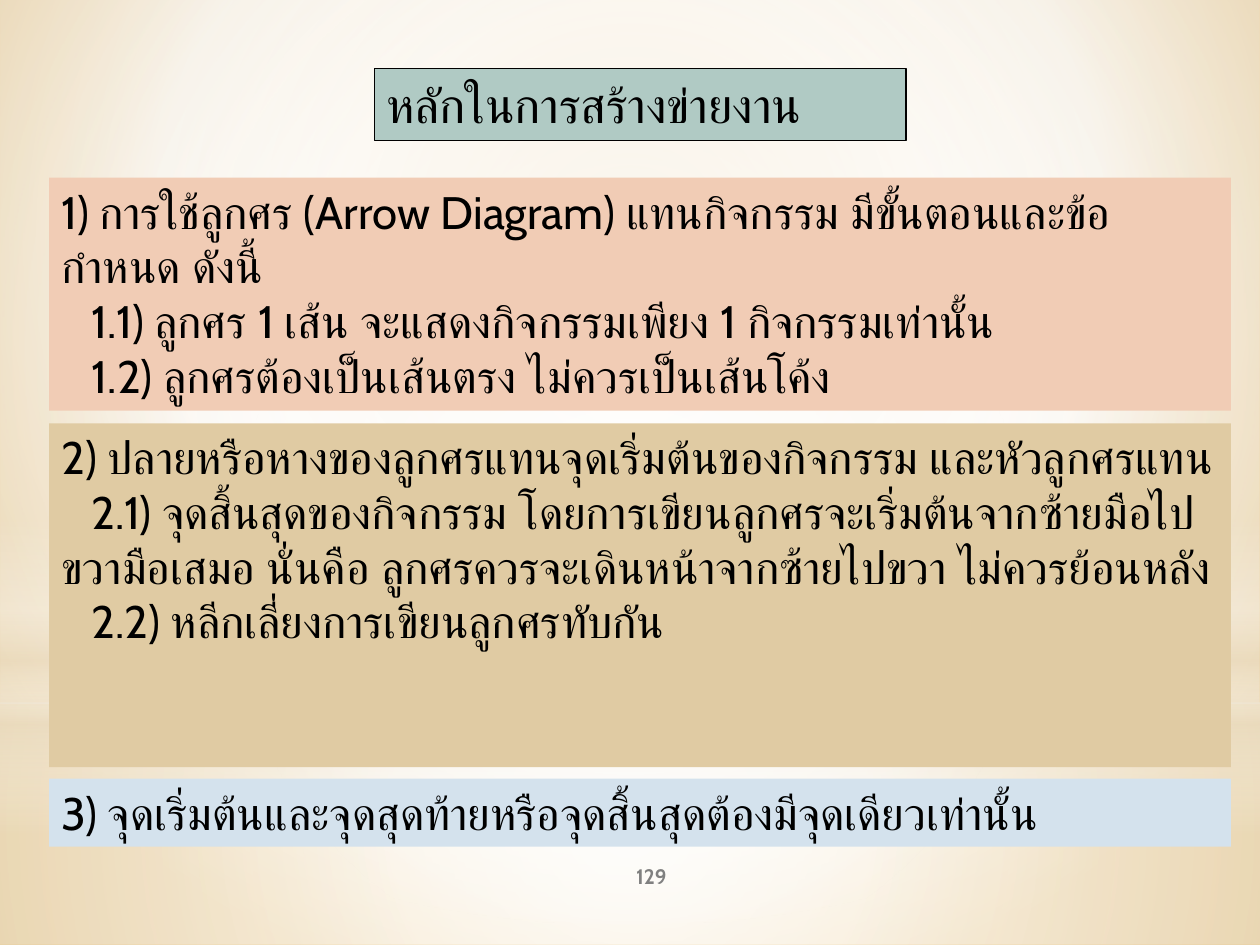
from dataclasses import dataclass

from lxml import etree
from pptx import Presentation
from pptx.dml.color import RGBColor
from pptx.enum.shapes import MSO_SHAPE
from pptx.enum.text import MSO_ANCHOR, PP_ALIGN
from pptx.oxml import parse_xml
from pptx.oxml.ns import nsdecls, qn
from pptx.shapes.autoshape import Shape
from pptx.slide import Slide
from pptx.util import Pt

RECT, OVAL = MSO_SHAPE.RECTANGLE, MSO_SHAPE.OVAL
TOP, MIDDLE = MSO_ANCHOR.TOP, MSO_ANCHOR.MIDDLE
LEFT, CENTER = PP_ALIGN.LEFT, PP_ALIGN.CENTER

FONT = "Cabin"
WIDTH, HEIGHT = 720, 540
PANEL_LEFT, PANEL_WIDTH = 28.08, 675.36
SUB_INDENT = 17.2
COLORS = {
    "white": "FFFFFF", "black": "000000", "gray": "808080",
    "sand": "ECD7B0", "gold": "E6BE74", "cream": "EBDDC3",
    "teal": "B0CAC4", "peach": "F1CCB5", "tan": "E0CBA3", "blue": "D4E2ED",
}


@dataclass(frozen=True)
class Gradient:
    stops: tuple[tuple[int, str, int], ...]
    center: tuple[int, int, int, int] | None = (50, 50, 50, 50)


@dataclass(frozen=True)
class Glow:
    shape: MSO_SHAPE
    top: float
    height: float
    gradient: Gradient


@dataclass(frozen=True)
class Panel:
    top: float
    height: float
    color: str
    heading: str
    items: tuple[str, ...] = ()
    left: float = PANEL_LEFT
    width: float = PANEL_WIDTH
    size: float = 26
    outlined: bool = False


BACKDROP = Gradient(((0, "sand", 100), (60, "white", 100), (100, "gold", 100)),
                    (20, 10, 20, 60))
GLOWS = [
    Glow(RECT, 401.76, 138.24,
         Gradient(((0, "white", 91), (37, "white", 76), (100, "cream", 79)))),
    Glow(RECT, 0, 401.76,
         Gradient(((0, "white", 89), (48, "white", 62), (100, "cream", 79)))),
    Glow(RECT, 296.64, 180,
         Gradient(((0, "white", 0), (29, "white", 30), (45, "cream", 40),
                   (55, "white", 26), (65, "cream", 60), (100, "white", 0)), None)),
    Glow(OVAL, 126, 401.76, Gradient(((0, "white", 100), (56, "white", 0)))),
]
PANELS = [
    Panel(39.24, 41.04, "teal", "หลักในการสร้างข่ายงาน",
          left=213.84, width=303.84, size=28, outlined=True),
    Panel(101.52, 133.2, "peach",
          "1) การใช้ลูกศร (Arrow Diagram) แทนกิจกรรม มีขั้นตอนและข้อกำหนด ดังนี้",
          ("1.1) ลูกศร 1 เส้น จะแสดงกิจกรรมเพียง 1 กิจกรรมเท่านั้น",
           "1.2) ลูกศรต้องเป็นเส้นตรง ไม่ควรเป็นเส้นโค้ง")),
    Panel(241.92, 196.56, "tan",
          "2) ปลายหรือหางของลูกศรแทนจุดเริ่มต้นของกิจกรรม และหัวลูกศรแทน",
          ("2.1) จุดสิ้นสุดของกิจกรรม โดยการเขียนลูกศรจะเริ่มต้นจากซ้ายมือไปขวามือเสมอ "
           "นั่นคือ ลูกศรควรจะเดินหน้าจากซ้ายไปขวา ไม่ควรย้อนหลัง",
           "2.2) หลีกเลี่ยงการเขียนลูกศรทับกัน")),
    Panel(444.96, 38.88, "blue",
          "3) จุดเริ่มต้นและจุดสุดท้ายหรือจุดสิ้นสุดต้องมีจุดเดียวเท่านั้น"),
]


def rgb(name: str) -> RGBColor:
    """Return the named palette colour."""
    return RGBColor.from_string(COLORS[name])


def set_gradient(parent: etree._Element, gradient: Gradient) -> None:
    """Replace the solid fill of an element with a gradient."""
    stops = "".join(
        f'<a:gs pos="{pos * 1000}"><a:srgbClr val="{COLORS[color]}">'
        f'<a:alpha val="{alpha * 1000}"/></a:srgbClr></a:gs>'
        for pos, color, alpha in gradient.stops)
    if gradient.center:
        l, t, r, b = (side * 1000 for side in gradient.center)
        shade = (f'<a:path path="circle"><a:fillToRect l="{l}" t="{t}" '
                 f'r="{r}" b="{b}"/></a:path>')
    else:
        shade = '<a:lin ang="5400000" scaled="0"/>'
    fill = parse_xml(f'<a:gradFill {nsdecls("a")} rotWithShape="1">'
                     f'<a:gsLst>{stops}</a:gsLst>{shade}</a:gradFill>')
    parent.replace(parent.find(qn("a:solidFill")), fill)


def add_block(slide: Slide, shape: MSO_SHAPE, left: float, top: float,
              width: float, height: float, color: str) -> Shape:
    """Add a flat shape without outline."""
    sp = slide.shapes.add_shape(shape, Pt(left), Pt(top), Pt(width), Pt(height))
    sp.shadow.inherit = False
    sp.fill.solid()
    sp.fill.fore_color.rgb = rgb(color)
    sp.line.fill.background()
    return sp


def add_glow(slide: Slide, glow: Glow) -> None:
    """Add a full-width translucent gradient."""
    sp = add_block(slide, glow.shape, 0, glow.top, WIDTH, glow.height, "white")
    set_gradient(sp.element.spPr, glow.gradient)


def write(sp: Shape, lines: tuple[str, ...], size: float, color: str = "black",
          align: PP_ALIGN = LEFT, anchor: MSO_ANCHOR = TOP, bold: bool = False) -> None:
    """Write paragraphs, indenting the first line of all but the first."""
    tf = sp.text_frame
    tf.word_wrap = True
    tf.vertical_anchor = anchor
    for i, line in enumerate(lines):
        p = tf.add_paragraph() if i else tf.paragraphs[0]
        p.text = line
        p.alignment = align
        if i:
            p._p.get_or_add_pPr().set("indent", str(Pt(SUB_INDENT)))
        p.font.name = FONT
        p.font.size = Pt(size)
        p.font.bold = bold
        p.font.color.rgb = rgb(color)


def add_panel(slide: Slide, panel: Panel) -> None:
    """Add a coloured panel with its heading and items."""
    sp = add_block(slide, RECT, panel.left, panel.top, panel.width, panel.height,
                   panel.color)
    if panel.outlined:
        sp.line.color.rgb = rgb("black")
        sp.line.width = Pt(0.75)
    write(sp, (panel.heading, *panel.items), panel.size)


def main() -> None:
    """Build and save the slide."""
    prs = Presentation()
    prs.slide_width, prs.slide_height = Pt(WIDTH), Pt(HEIGHT)
    slide = prs.slides.add_slide(prs.slide_layouts[6])
    slide.background.fill.solid()
    slide.background.fill.fore_color.rgb = rgb("white")
    set_gradient(slide.element.find(".//" + qn("p:bgPr")), BACKDROP)
    for glow in GLOWS:
        add_glow(slide, glow)
    number = slide.shapes.add_textbox(Pt(300.24), Pt(486), Pt(144), Pt(28.8))
    write(number, ("129",), 12, "gray", CENTER, MIDDLE, bold=True)
    for panel in PANELS:
        add_panel(slide, panel)
    prs.save("out.pptx")


if __name__ == "__main__":
    main()
